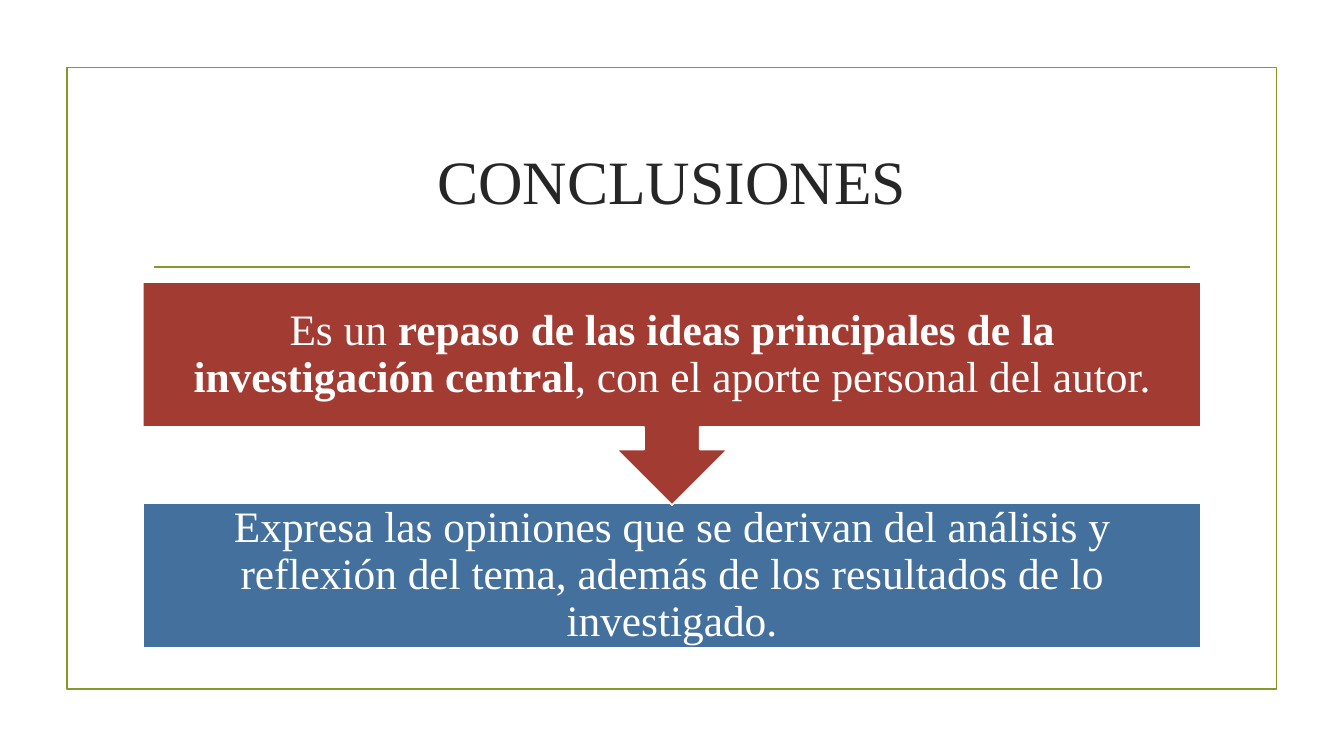
from dataclasses import dataclass

from lxml import etree
from pptx import Presentation
from pptx.dml.color import RGBColor
from pptx.enum.shapes import MSO_CONNECTOR, MSO_SHAPE
from pptx.enum.text import MSO_ANCHOR, MSO_AUTO_SIZE, PP_ALIGN
from pptx.oxml.ns import qn
from pptx.util import Cm, Pt

RECTANGLE = MSO_SHAPE.RECTANGLE
ARROW_CALLOUT = MSO_SHAPE.DOWN_ARROW_CALLOUT
STRAIGHT = MSO_CONNECTOR.STRAIGHT
MIDDLE = MSO_ANCHOR.MIDDLE
NO_AUTOFIT = MSO_AUTO_SIZE.NONE
CENTER = PP_ALIGN.CENTER


@dataclass(frozen=True)
class Theme:
    """Colours, type and line sizes of the slide."""

    font: str = "Times New Roman"
    title_size: int = 44
    body_size: int = 31
    line_width: float = 1.25
    ink: RGBColor = RGBColor.from_string("262626")
    accent: RGBColor = RGBColor.from_string("83992A")
    idea: RGBColor = RGBColor.from_string("A23C33")
    opinion: RGBColor = RGBColor.from_string("44709D")
    white: RGBColor = RGBColor.from_string("FFFFFF")


THEME = Theme()

IDEA_TEXT = [
    ("Es un ", False),
    ("repaso de las ideas principales de la investigación central", True),
    (", con el aporte personal del autor.", False),
]
OPINION_TEXT = [
    (
        "Expresa las opiniones que se derivan del análisis y reflexión del tema, "
        "además de los resultados de lo investigado.",
        False,
    ),
]


def style_paragraph(paragraph, size, color):
    """Centre a paragraph and set its font."""
    paragraph.alignment = CENTER
    paragraph.font.name = THEME.font
    paragraph.font.size = Pt(size)
    paragraph.font.color.rgb = color


def style_line(line, color):
    """Give an outline its colour and the common width."""
    line.color.rgb = color
    line.width = Pt(THEME.line_width)


def add_frame(slide, left, top, width, height):
    """Draw the border around the slide content."""
    frame = slide.shapes.add_shape(RECTANGLE, left, top, width, height)
    frame.shadow.inherit = False
    frame.fill.background()
    style_line(frame.line, THEME.accent)


def add_heading(slide, left, top, width, height):
    """Place the title with the rule beneath it."""
    title = slide.shapes.title
    title.left, title.top, title.width, title.height = left, top, width, height
    title.text_frame.text = "CONCLUSIONES"
    title.text_frame.word_wrap = True
    title.text_frame.auto_size = NO_AUTOFIT
    title.text_frame.vertical_anchor = MIDDLE
    style_paragraph(title.text_frame.paragraphs[0], THEME.title_size, THEME.ink)

    rule_inset = Cm(0.28)
    rule_top = top + height + Cm(0.38)
    rule = slide.shapes.add_connector(
        STRAIGHT, left + rule_inset, rule_top, left + width - rule_inset, rule_top
    )
    style_line(rule.line, THEME.accent)
    etree.SubElement(rule._element.spPr, qn("a:effectLst"))


def add_step(slide, outline, color, fragments, left, top, width, height):
    """Draw one coloured step with its text."""
    step = slide.shapes.add_shape(outline, left, top, width, height)
    step.shadow.inherit = False
    step.fill.solid()
    step.fill.fore_color.rgb = color
    style_line(step.line, THEME.white)

    frame = step.text_frame
    frame.word_wrap = True
    frame.vertical_anchor = MIDDLE
    frame.margin_left = frame.margin_right = Cm(0.6)
    frame.margin_top = frame.margin_bottom = Cm(0.6)
    paragraph = frame.paragraphs[0]
    paragraph.line_spacing = 0.9
    style_paragraph(paragraph, THEME.body_size, THEME.white)
    for text, bold in fragments:
        run = paragraph.add_run()
        run.text = text
        if bold:
            run.font.bold = True


def add_process(slide, left, top, width, height):
    """Stack the idea callout so that it points at the opinion box."""
    opinion_height = Cm(3.65)
    opinion_top = top + height - opinion_height
    callout_height = opinion_top - top + Cm(0.05)
    add_step(slide, RECTANGLE, THEME.opinion, OPINION_TEXT,
             left, opinion_top, width, opinion_height)
    add_step(slide, ARROW_CALLOUT, THEME.idea, IDEA_TEXT,
             left, top, width, callout_height)


def main():
    """Build and save the conclusions slide."""
    presentation = Presentation()
    presentation.slide_width = Cm(33.87)
    presentation.slide_height = Cm(19.05)
    slide = presentation.slides.add_slide(presentation.slide_layouts[5])

    content_left, content_width = Cm(3.6), Cm(26.67)
    add_frame(slide, Cm(1.69), Cm(1.7), Cm(30.48), Cm(15.67))
    add_heading(slide, content_left, Cm(2.72), content_width, Cm(3.63))
    add_process(slide, content_left, Cm(7.11), content_width, Cm(9.22))
    presentation.save("out.pptx")


if __name__ == "__main__":
    main()
